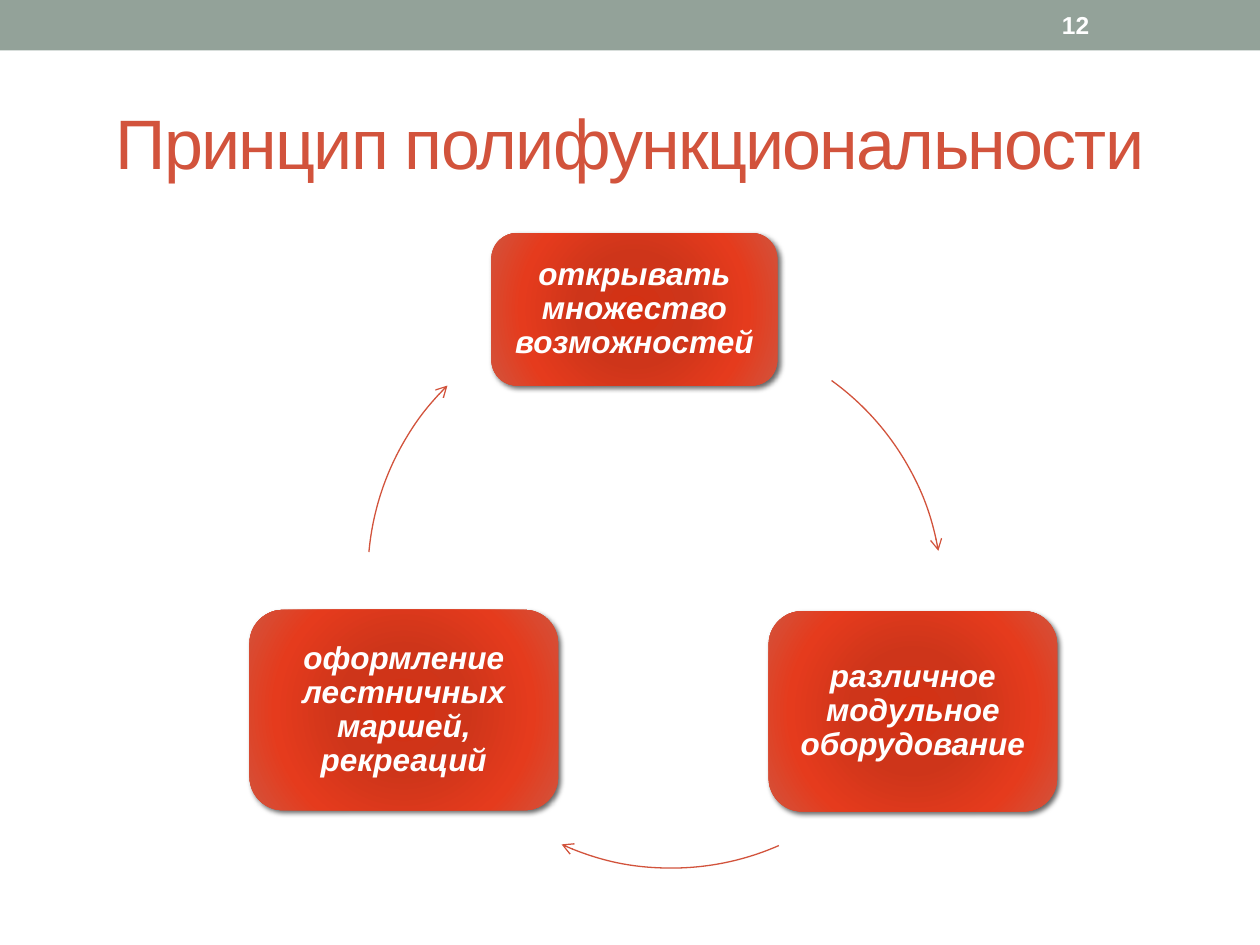
from dataclasses import dataclass

from lxml import etree
from pptx import Presentation
from pptx.dml.color import RGBColor
from pptx.enum import shapes, text
from pptx.oxml import ns
from pptx.util import Inches, Pt


@dataclass(frozen=True)
class Theme:
    font: str = "Arial"
    band: str = "93A299"
    accent: str = "D2533C"
    light: str = "FFFFFF"
    shade: str = "000000"
    glow: tuple = ((0, "D43113"), (34, "CE351A"), (70, "E53B1D"), (100, "D2533C"))
    title: int = 40
    label: int = 18
    number: int = 14


THEME = Theme()

# Left, top, width, height and wording of each step
STEPS = [
    (3.9, 1.85, 2.27, 1.21, "открывать множество возможностей"),
    (6.1, 4.85, 2.29, 1.59, "различное модульное оборудование"),
    (1.98, 4.84, 2.45, 1.59, "оформление лестничных маршей, рекреаций"),
]
# Left and top of each circle, then start and end angle clockwise from the right
ARCS = [(3.24, 2.62, 305.8, 350), (3.21, 2.65, 66.3, 114.3), (2.92, 2.45, 185.1, 225.4)]
RING = 4.24


def rgb(code):
    return RGBColor.from_string(code)


def add_node(parent, tag, **attrs):
    node = etree.SubElement(parent, ns.qn(tag))
    for key, value in attrs.items():
        node.set(key, str(value))
    return node


def style(para, size, color, bold=False, italic=False):
    for run in para.runs:
        font = run.font
        font.name, font.size = THEME.font, Pt(size)
        font.bold, font.italic = bold, italic
        font.color.rgb = rgb(color)


def add_band(slide):
    band = slide.shapes.add_shape(
        shapes.MSO_SHAPE.RECTANGLE, 0, 0, Inches(10), Inches(0.4))
    band.shadow.inherit = False
    band.fill.solid()
    band.fill.fore_color.rgb = rgb(THEME.band)
    band.line.fill.background()


def set_title(slide, words):
    title = slide.shapes.title
    title.left, title.top = Inches(0.5), Inches(0.58)
    title.width, title.height = Inches(9), Inches(1.08)
    frame = title.text_frame
    frame.text = words
    frame.vertical_anchor = text.MSO_ANCHOR.MIDDLE
    para = frame.paragraphs[0]
    para.alignment = text.PP_ALIGN.CENTER
    style(para, THEME.title, THEME.accent)
    para.runs[0].font._element.set("spc", "-100")


def add_glow(shape):
    """Give the shape a round gradient and a soft shadow."""
    shape.fill.gradient()
    grad = shape._element.spPr.find(ns.qn("a:gradFill"))
    for child in list(grad):
        grad.remove(child)
    stops = add_node(grad, "a:gsLst")
    for place, color in THEME.glow:
        stop = add_node(stops, "a:gs", pos=place * 1000)
        add_node(stop, "a:srgbClr", val=color)
    round_ = add_node(grad, "a:path", path="circle")
    add_node(round_, "a:fillToRect", l=100000, t=100000, r=100000, b=100000)

    shape.shadow.inherit = False
    effects = shape._element.spPr.find(ns.qn("a:effectLst"))
    shadow = add_node(effects, "a:outerShdw", blurRad=Pt(3), dist=Pt(2),
                      dir=45 * 60000, algn="tl", rotWithShape=0)
    color = add_node(shadow, "a:srgbClr", val=THEME.shade)
    add_node(color, "a:alpha", val=60000)


def add_step(slide, left, top, width, height, words):
    box = slide.shapes.add_shape(
        shapes.MSO_SHAPE.ROUNDED_RECTANGLE,
        Inches(left), Inches(top), Inches(width), Inches(height))
    add_glow(box)
    box.line.fill.background()
    frame = box.text_frame
    frame.text = words
    frame.word_wrap = True
    frame.vertical_anchor = text.MSO_ANCHOR.MIDDLE
    frame.margin_left = frame.margin_right = Inches(0.07)
    frame.margin_top = frame.margin_bottom = Inches(0.07)
    para = frame.paragraphs[0]
    para.alignment = text.PP_ALIGN.CENTER
    para.line_spacing = 0.9
    style(para, THEME.label, THEME.light, bold=True, italic=True)


def add_arc(slide, left, top, start, end):
    arc = slide.shapes.add_shape(
        shapes.MSO_SHAPE.ARC, Inches(left), Inches(top), Inches(RING), Inches(RING))
    # One degree is 60000 units and one adjustment step is 100000 units
    arc.adjustments[0] = start * 0.6
    arc.adjustments[1] = end * 0.6
    arc.shadow.inherit = False
    arc.fill.background()
    arc.line.color.rgb = rgb(THEME.accent)
    arc.line.width = Pt(0.75)
    line = arc._element.spPr.find(ns.qn("a:ln"))
    add_node(line, "a:tailEnd", type="arrow")


def add_number(slide, number):
    box = slide.shapes.add_textbox(
        Inches(8.33), Inches(0.02), Inches(1.17), Inches(0.36))
    frame = box.text_frame
    frame.text = number
    frame.word_wrap = True
    frame.vertical_anchor = text.MSO_ANCHOR.MIDDLE
    style(frame.paragraphs[0], THEME.number, THEME.light, bold=True)


def main():
    deck = Presentation()
    deck.slide_width, deck.slide_height = Inches(10), Inches(7.5)
    slide = deck.slides.add_slide(deck.slide_layouts[5])

    # Header
    add_band(slide)
    set_title(slide, "Принцип полифункциональности")

    # Cycle of steps, each followed by its arrow
    for step, arc in zip(STEPS, ARCS):
        add_step(slide, *step)
        add_arc(slide, *arc)

    # Slide number
    add_number(slide, "12")
    deck.save("out.pptx")


if __name__ == "__main__":
    main()
